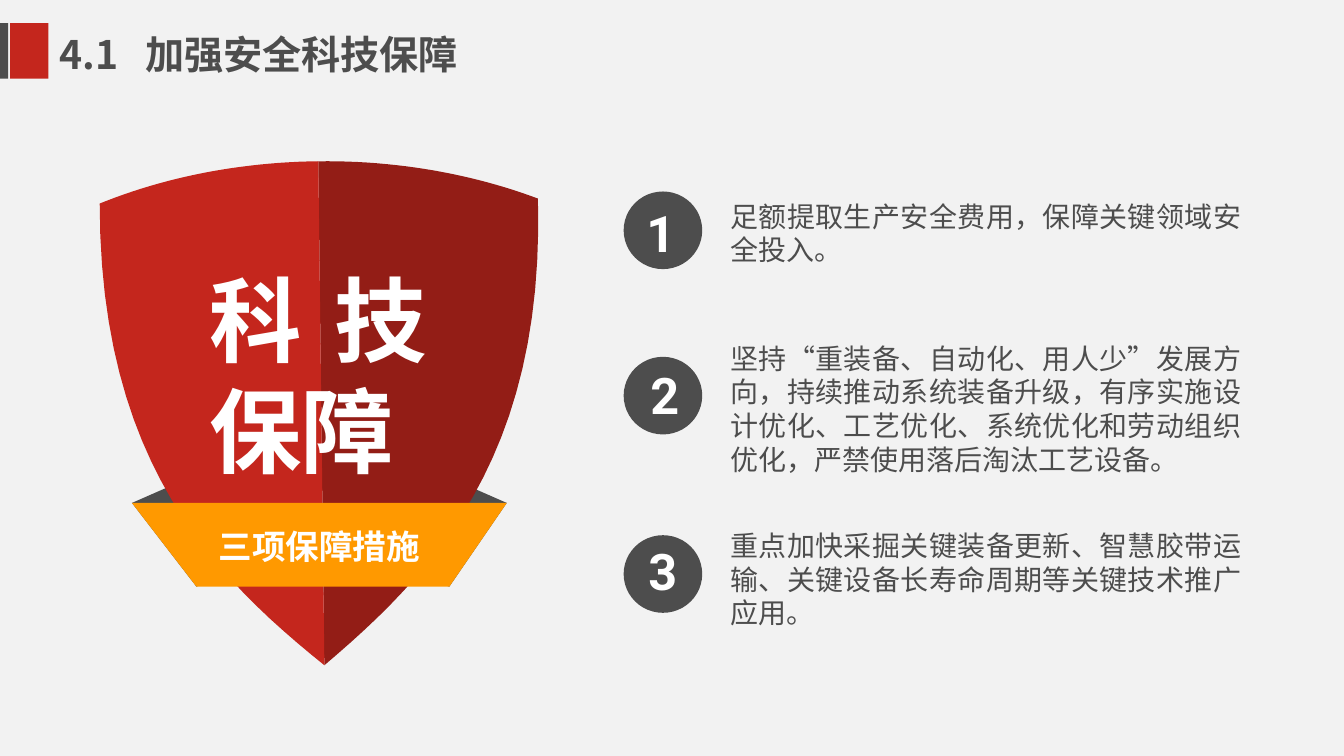
from dataclasses import dataclass

from lxml import etree
from pptx import Presentation
from pptx.dml.color import RGBColor
from pptx.enum.shapes import MSO_SHAPE
from pptx.enum.text import MSO_ANCHOR, MSO_AUTO_SIZE, PP_ALIGN
from pptx.oxml.ns import qn
from pptx.shapes.autoshape import Shape
from pptx.slide import Slide
from pptx.util import Inches, Pt

RECTANGLE, OVAL = MSO_SHAPE.RECTANGLE, MSO_SHAPE.OVAL
TOP, MIDDLE = MSO_ANCHOR.TOP, MSO_ANCHOR.MIDDLE
LEFT, CENTER, JUSTIFY = PP_ALIGN.LEFT, PP_ALIGN.CENTER, PP_ALIGN.JUSTIFY
NO_AUTOFIT = MSO_AUTO_SIZE.NONE

BACKGROUND = RGBColor(0xF2, 0xF2, 0xF2)
GRAY = RGBColor(0x4D, 0x4D, 0x4D)
RED = RGBColor(0xC4, 0x26, 0x1D)
DARK_RED = RGBColor(0x93, 0x1D, 0x16)
ORANGE = RGBColor(0xFF, 0x99, 0x00)
WHITE = RGBColor(0xFF, 0xFF, 0xFF)

CHINESE_FONT = "Noto Sans CJK SC"
NUMBER_FONT = "Roboto"
LINE_HEIGHT = 1.2
# Extra space above the first line, as a share of the text size
TOP_SHIFT = {CHINESE_FONT: 0.09, NUMBER_FONT: 0.04}

Point = tuple[float, float]
Box = tuple[float, float, float, float]


@dataclass(frozen=True)
class TextStyle:
    size: int
    color: RGBColor
    align: PP_ALIGN
    bold: bool = True
    font: str = CHINESE_FONT
    anchor: MSO_ANCHOR = TOP


@dataclass(frozen=True)
class Measure:
    text: str
    text_top: float
    text_height: float
    badge_top: float
    number_box: Box


TITLE_STYLE = TextStyle(28, GRAY, LEFT, anchor=MIDDLE)
SHIELD_STYLE = TextStyle(66, WHITE, JUSTIFY)
RIBBON_STYLE = TextStyle(24, WHITE, CENTER)
NUMBER_STYLE = TextStyle(36, WHITE, CENTER, font=NUMBER_FONT)
MEASURE_STYLE = TextStyle(20, GRAY, JUSTIFY, bold=False)

MEASURES = [
    Measure("足额提取生产安全费用，保障关键领域安全投入。",
            1.9, 0.77, 1.9, (6.31, 1.93, 0.5, 0.71)),
    Measure("坚持“重装备、自动化、用人少”发展方向，持续推动系统装备升级，"
            "有序实施设计优化、工艺优化、系统优化和劳动组织优化，严禁使用落后淘汰工艺设备。",
            3.31, 1.45, 3.54, (6.3, 3.54, 0.6, 0.71)),
    Measure("重点加快采掘关键装备更新、智慧胶带运输、关键设备长寿命周期等关键技术推广应用。",
            5.17, 1.11, 5.31, (6.28, 5.29, 0.6, 0.71)),
]

SHIELD_TIP, SHIELD_CREST = (3.22, 6.6), (3.16, 1.6)
RIBBON_LEFT, RIBBON_RIGHT = (1.31, 4.99), (5.03, 4.99)
RIBBON_BOTTOM_LEFT, RIBBON_BOTTOM_RIGHT = (1.95, 5.82), (4.46, 5.82)


def curve(start: Point, control_1: Point, control_2: Point, end: Point,
          steps: int = 24) -> list[Point]:
    """Points along a cubic Bezier curve, both ends included."""
    points = []
    for step in range(steps + 1):
        t = step / steps
        weights = ((1 - t) ** 3, 3 * t * (1 - t) ** 2, 3 * t * t * (1 - t), t ** 3)
        corners = (start, control_1, control_2, end)
        points.append((sum(w * x for w, (x, _) in zip(weights, corners)),
                       sum(w * y for w, (_, y) in zip(weights, corners))))
    return points


def paint(shape: Shape, color: RGBColor) -> None:
    shape.fill.solid()
    shape.fill.fore_color.rgb = color
    shape.line.fill.background()
    shape.shadow.inherit = False


def add_preset(slide: Slide, kind: MSO_SHAPE, box: Box, color: RGBColor) -> None:
    paint(slide.shapes.add_shape(kind, *map(Inches, box)), color)


def add_polygon(slide: Slide, points: list[Point], color: RGBColor) -> None:
    corners = [(Inches(x), Inches(y)) for x, y in points]
    builder = slide.shapes.build_freeform(*corners[0])
    builder.add_line_segments(corners[1:], close=True)
    paint(builder.convert_to_shape(), color)


def write_text(shape: Shape, text: str, style: TextStyle) -> None:
    frame = shape.text_frame
    frame.text = text
    frame.word_wrap = True
    frame.auto_size = NO_AUTOFIT
    frame.vertical_anchor = style.anchor
    frame.margin_top = Inches(0.05) + Pt(style.size * TOP_SHIFT[style.font])
    paragraph = frame.paragraphs[0]
    paragraph.alignment = style.align
    paragraph.line_spacing = Pt(style.size * LINE_HEIGHT)
    for run in paragraph.runs:
        run.font.size = Pt(style.size)
        run.font.bold = style.bold
        run.font.name = style.font
        run.font.color.rgb = style.color
        east_asian = etree.SubElement(run.font._element, qn("a:ea"))
        east_asian.set("typeface", style.font)


def add_text(slide: Slide, box: Box, text: str, style: TextStyle) -> None:
    write_text(slide.shapes.add_textbox(*map(Inches, box)), text, style)


def add_title(slide: Slide) -> None:
    title = slide.shapes.title
    title.left, title.top, title.width, title.height = map(Inches, (0.49, 0.23, 5.24, 0.57))
    write_text(title, "4.1\t加强安全科技保障", TITLE_STYLE)
    properties = title.text_frame.paragraphs[0]._p.get_or_add_pPr()
    tab_list = etree.SubElement(properties, qn("a:tabLst"))
    etree.SubElement(tab_list, qn("a:tab"), pos=str(Inches(0.85)), algn="l")
    add_preset(slide, RECTANGLE, (0, 0.23, 0.08, 0.55), GRAY)
    add_preset(slide, RECTANGLE, (0.1, 0.23, 0.38, 0.55), RED)


def add_shield(slide: Slide) -> None:
    add_polygon(slide, [RIBBON_LEFT, (2.54, 4.45), (2.86, 5.5), RIBBON_BOTTOM_LEFT], GRAY)
    add_polygon(slide, [RIBBON_RIGHT, (3.8, 4.45), (3.49, 5.5), RIBBON_BOTTOM_RIGHT], GRAY)
    right_half = (curve(SHIELD_TIP, (4.27, 5.71), (5.41, 4.55), (5.34, 1.97))
                  + curve((5.34, 1.97), (4.7, 1.73), (3.95, 1.59), SHIELD_CREST))
    left_half = (curve(SHIELD_TIP, (2.14, 5.73), (0.99, 4.6), (0.99, 2.02))
                 + curve((0.99, 2.02), (1.63, 1.76), (2.37, 1.61), SHIELD_CREST))
    add_polygon(slide, right_half, DARK_RED)
    add_polygon(slide, left_half, RED)
    add_polygon(slide, [RIBBON_LEFT, RIBBON_RIGHT, RIBBON_BOTTOM_RIGHT, RIBBON_BOTTOM_LEFT],
                ORANGE)
    add_text(slide, (1.98, 2.48, 2.36, 2.32), "科技保障", SHIELD_STYLE)
    add_text(slide, (1.89, 5.14, 2.56, 0.5), "三项保障措施", RIBBON_STYLE)


def add_measure(slide: Slide, number: int, measure: Measure) -> None:
    add_preset(slide, OVAL, (6.19, measure.badge_top, 0.78, 0.77), GRAY)
    add_text(slide, measure.number_box, str(number), NUMBER_STYLE)
    add_text(slide, (7.15, measure.text_top, 5.27, measure.text_height),
             measure.text, MEASURE_STYLE)


def main() -> None:
    presentation = Presentation()
    presentation.slide_width, presentation.slide_height = Inches(13.34), Inches(7.5)
    title_only = presentation.slide_layouts.get_by_name("Title Only")
    slide = presentation.slides.add_slide(title_only)
    slide.background.fill.solid()
    slide.background.fill.fore_color.rgb = BACKGROUND
    add_title(slide)
    add_shield(slide)
    for number, measure in enumerate(MEASURES, start=1):
        add_measure(slide, number, measure)
    presentation.save("out.pptx")


if __name__ == "__main__":
    main()
